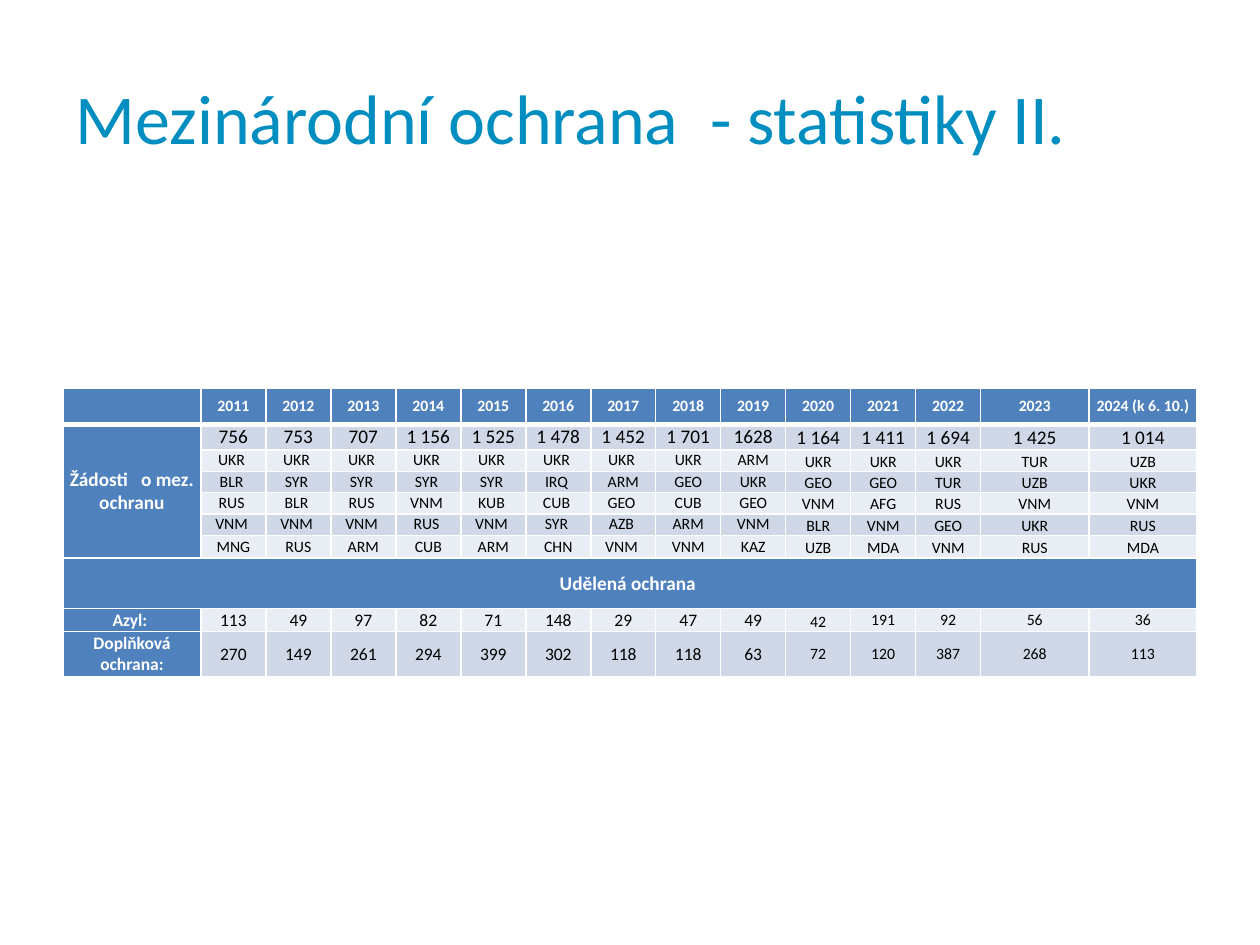
from lxml.etree import SubElement
from pptx import Presentation
from pptx.dml.color import RGBColor
from pptx.enum.text import MSO_ANCHOR as Anchor, PP_ALIGN as Align
from pptx.oxml.ns import qn
from pptx.util import Cm, Pt

FONT = "Calibri"
COLORS = {
    "title": "008EC0",
    "header": "4F81BD",
    "band_dark": "D0D8E8",
    "band_light": "E9EDF4",
    "white": "FFFFFF",
    "black": "000000",
}

TITLE = "Mezinárodní ochrana  - statistiky II."
TITLE_BOX = (1.27, 0.76, 22.86, 3.18)
TABLE_BOX = (1.27, 7.82, 22.86, 5.82)

COLUMN_WIDTHS = [2.78] + [1.31] * 12 + [2.18] * 2
ROW_HEIGHTS = [0.74, 0.51] + [0.43] * 4 + [0.46, 1.02, 0.46, 0.91]
REQUESTS_ROW, LAST_COUNTRY_ROW, GRANTED_ROW, ASYLUM_ROW = 1, 6, 7, 8
FIRST_LATE_COLUMN = 10  # the years from 2020 on are set differently

ROWS = [
    "|2011|2012|2013|2014|2015|2016|2017|2018|2019|2020|2021|2022|2023|2024 (k 6. 10.)",
    "Žádosti   o mez. ochranu|756|753|707|1 156|1 525|1 478|1 452|1 701|1628"
    "|1 164|1 411|1 694|1 425|1 014",
    "|UKR |UKR |UKR |UKR |UKR |UKR |UKR |UKR|ARM|UKR|UKR|UKR|TUR|UZB",
    "|BLR |SYR |SYR |SYR |SYR |IRQ |ARM|GEO|UKR|GEO|GEO|TUR|UZB|UKR",
    "|RUS |BLR |RUS |VNM |KUB |CUB |GEO |CUB|GEO|VNM|AFG|RUS|VNM|VNM",
    "|VNM |VNM |VNM |RUS |VNM |SYR |AZB |ARM|VNM|BLR|VNM|GEO|UKR|RUS",
    "|MNG|RUS|ARM|CUB|ARM|CHN|VNM |VNM|KAZ|UZB|MDA|VNM|RUS|MDA",
    "Udělená ochrana " + "|" * 14,
    "Azyl: |113|49|97|82|71|148|29|47|49|42|191|92|56|36",
    "Doplňková ochrana:|270|149|261|294|399|302|118|118|63|72|120|387|268|113",
]


def color(name):
    return RGBColor.from_string(COLORS[name])


def add_run(paragraph, text, size, color_name, bold=False):
    run = paragraph.add_run()
    run.text = text
    run.font.name = FONT
    run.font.size = Pt(size)
    run.font.bold = bold
    run.font.color.rgb = color(color_name)


def set_borders(cell, row):
    """White rules, with a thick one between the header and the body."""
    properties = cell._tc.get_or_add_tcPr()
    widths = {
        "a:lnL": 1,
        "a:lnR": 1,
        "a:lnT": 3 if row == REQUESTS_ROW else 1,
        "a:lnB": 3 if row == 0 else 1,
    }
    for tag, width in widths.items():
        line = SubElement(properties, qn(tag), w=str(Pt(width)))
        fill = SubElement(line, qn("a:solidFill"))
        SubElement(fill, qn("a:srgbClr"), val=COLORS["white"])


def text_size(row, column):
    if row in (REQUESTS_ROW, GRANTED_ROW):
        return 11
    if row >= ASYLUM_ROW and column < FIRST_LATE_COLUMN:
        return 10
    return 9


def text_anchor(row, column):
    late_request = REQUESTS_ROW <= row <= LAST_COUNTRY_ROW and column >= FIRST_LATE_COLUMN
    if late_request or (row, column) == (ASYLUM_ROW, FIRST_LATE_COLUMN):
        return Anchor.BOTTOM
    return Anchor.MIDDLE


def fill_cell(cell, row, column, text):
    is_header = row in (0, GRANTED_ROW) or column == 0
    band = "band_dark" if row % 2 else "band_light"
    set_borders(cell, row)
    cell.fill.solid()
    cell.fill.fore_color.rgb = color("header" if is_header else band)
    cell.margin_left = cell.margin_right = Cm(0.1)
    cell.margin_top = cell.margin_bottom = 0
    cell.vertical_anchor = text_anchor(row, column)
    paragraph = cell.text_frame.paragraphs[0]
    paragraph.alignment = Align.CENTER
    add_run(paragraph, text, text_size(row, column),
            "white" if is_header else "black", is_header)


def add_title(slide, box):
    title = slide.shapes.title
    title.left, title.top, title.width, title.height = map(Cm, box)
    title.text_frame.vertical_anchor = Anchor.MIDDLE
    paragraph = title.text_frame.paragraphs[0]
    paragraph.alignment = Align.LEFT
    add_run(paragraph, TITLE, 40, "title")


def add_statistics_table(slide, box):
    table = slide.shapes.add_table(
        len(ROWS), len(COLUMN_WIDTHS), *map(Cm, box)).table
    for column, width in zip(table.columns, COLUMN_WIDTHS):
        column.width = Cm(width)
    for row, height in zip(table.rows, ROW_HEIGHTS):
        row.height = Cm(height)

    # Merged labels
    table.cell(REQUESTS_ROW, 0).merge(table.cell(LAST_COUNTRY_ROW, 0))
    table.cell(GRANTED_ROW, 0).merge(table.cell(GRANTED_ROW, len(COLUMN_WIDTHS) - 1))

    for row, line in enumerate(ROWS):
        for column, text in enumerate(line.split("|")):
            fill_cell(table.cell(row, column), row, column, text)


def main():
    presentation = Presentation()
    presentation.slide_width, presentation.slide_height = Cm(25.4), Cm(19.05)
    slide = presentation.slides.add_slide(presentation.slide_layouts[5])
    add_title(slide, TITLE_BOX)
    add_statistics_table(slide, TABLE_BOX)
    presentation.save("out.pptx")


if __name__ == "__main__":
    main()
